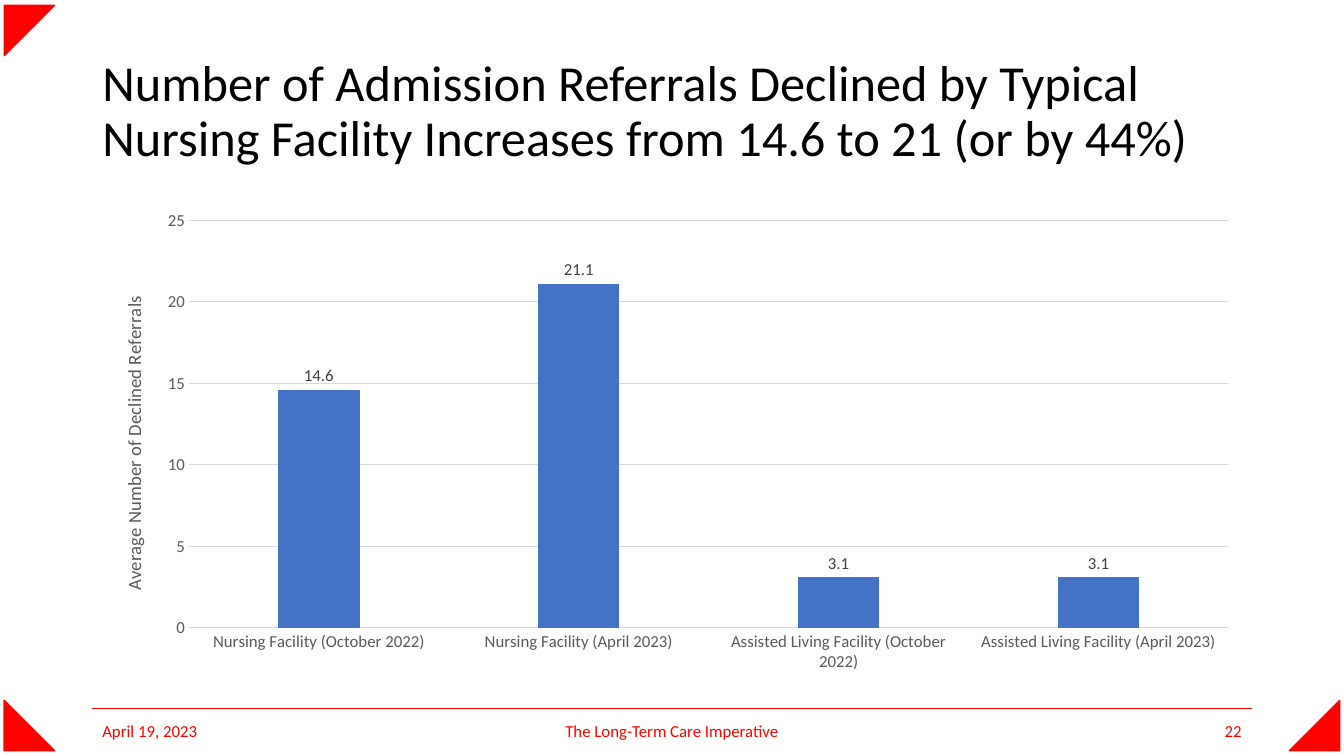
"""Build the slide on declined admission referrals."""
from dataclasses import dataclass

from lxml.etree import SubElement
from pptx import Presentation
from pptx.chart.axis import ValueAxis
from pptx.chart.chart import Chart
from pptx.chart.data import CategoryChartData as Data
from pptx.dml.color import RGBColor as Rgb
from pptx.enum.chart import XL_CHART_TYPE as Kind
from pptx.enum.chart import XL_LABEL_POSITION as Spot
from pptx.enum.chart import XL_TICK_MARK as Tick
from pptx.enum.shapes import MSO_CONNECTOR as Link
from pptx.enum.shapes import MSO_SHAPE as Form
from pptx.enum.text import MSO_ANCHOR as Anchor
from pptx.enum.text import MSO_AUTO_SIZE as Fit
from pptx.enum.text import PP_ALIGN as Align
from pptx.oxml.ns import qn
from pptx.slide import Slide
from pptx.text.text import Font
from pptx.util import Pt

PX = 9525


@dataclass(frozen=True)
class Theme:
    """Colours, type sizes and font of the slide."""
    face: str = "Calibri"
    ink: str = "000000"
    red: str = "FF0000"
    bar: str = "4472C4"
    grid: str = "D9D9D9"
    axis: str = "595959"
    label: str = "404040"
    head: float = 36
    name: float = 13.3
    small: float = 12


@dataclass(frozen=True)
class Box:
    """A rectangle in px."""
    x: int
    y: int
    w: int
    h: int

    def emu(self) -> tuple[int, int, int, int]:
        """Give the sides in EMU."""
        return self.x * PX, self.y * PX, self.w * PX, self.h * PX


@dataclass(frozen=True)
class Corner:
    """A corner triangle and its turn."""
    x: int
    y: int
    turn: int


@dataclass(frozen=True)
class Note:
    """A footer text and its place."""
    text: str
    x: int
    w: int
    align: Align


THEME = Theme()
HEAD = Box(88, 38, 1104, 139)
GRAPH = Box(88, 192, 1104, 457)
PLOT = Box(92, 18, 990, 388)
NAME = Box(24, 87, 18, 282)
TITLE = ("Number of Admission Referrals Declined by Typical "
         "Nursing Facility Increases from 14.6 to 21 (or by 44%)")
CORNERS = (Corner(4, 5, 90), Corner(1228, 667, 270), Corner(4, 667, 0))
NOTES = (
    Note("April 19, 2023", 88, 288, Align.LEFT),
    Note("The Long-Term Care Imperative", 424, 432, Align.CENTER),
    Note("22", 904, 288, Align.RIGHT),
)
RATES = {
    "Nursing Facility (October 2022)": 14.6,
    "Nursing Facility (April 2023)": 21.1,
    "Assisted Living Facility (October 2022)": 3.1,
    "Assisted Living Facility (April 2023)": 3.1,
}


def style(font: Font, size: float, hue: str) -> None:
    """Set face, size and colour of a font."""
    font.name, font.size, font.bold = THEME.face, Pt(size), False
    font.color.rgb = Rgb.from_string(hue)


def add_head(slide: Slide) -> None:
    """Fill and move the title."""
    head = slide.shapes.title
    head.left, head.top, head.width, head.height = HEAD.emu()
    frame = head.text_frame
    frame.auto_size, frame.word_wrap = Fit.NONE, True
    frame.vertical_anchor = Anchor.MIDDLE
    para = frame.paragraphs[0]
    para.alignment, para.line_spacing = Align.LEFT, 0.9
    run = para.add_run()
    run.text = TITLE
    style(run.font, THEME.head, THEME.ink)


def add_corner(slide: Slide, corner: Corner) -> None:
    """Draw one corner triangle."""
    box = Box(corner.x, corner.y, 48, 48)
    shape = slide.shapes.add_shape(Form.RIGHT_TRIANGLE, *box.emu())
    shape.rotation = corner.turn
    shape.shadow.inherit = False
    red = Rgb.from_string(THEME.red)
    shape.fill.solid()
    shape.fill.fore_color.rgb = red
    shape.line.color.rgb = red
    shape.line.width = Pt(1)


def add_rule(slide: Slide) -> None:
    """Draw the line above the footer."""
    rule = slide.shapes.add_connector(
        Link.STRAIGHT, 88 * PX, 675 * PX, 1192 * PX, 675 * PX)
    rule.line.color.rgb = Rgb.from_string(THEME.red)
    rule.line.width = Pt(0.5)
    SubElement(rule.element.spPr, qn("a:effectLst"))


def add_note(slide: Slide, note: Note) -> None:
    """Write one footer text."""
    box = Box(note.x, 677, note.w, 38)
    frame = slide.shapes.add_textbox(*box.emu()).text_frame
    frame.word_wrap, frame.vertical_anchor = True, Anchor.MIDDLE
    para = frame.paragraphs[0]
    para.alignment = note.align
    run = para.add_run()
    run.text = note.text
    style(run.font, THEME.small, THEME.red)


def pin(node, index: int, box: Box, sized: bool) -> None:
    """Fix the place of a chart part within the chart."""
    for old in node.findall(qn("c:layout")):
        node.remove(old)
    layout = SubElement(node, qn("c:layout"))
    node.insert(index, layout)
    manual = SubElement(layout, qn("c:manualLayout"))
    rules = {"xMode": "edge", "yMode": "edge",
             "x": box.x / GRAPH.w, "y": box.y / GRAPH.h}
    if sized:
        rules = {"layoutTarget": "inner", **rules,
                 "w": box.w / GRAPH.w, "h": box.h / GRAPH.h}
    for key, val in rules.items():
        SubElement(manual, qn(f"c:{key}")).set("val", str(val))


def set_scale(axis: ValueAxis) -> None:
    """Format the value axis and its title."""
    axis.minimum_scale, axis.maximum_scale, axis.major_unit = 0, 25, 5
    axis.tick_labels.number_format = "0"
    axis.tick_labels.number_format_is_linked = False
    axis.format.line.fill.background()
    grid = axis.major_gridlines.format.line
    grid.color.rgb, grid.width = Rgb.from_string(THEME.grid), Pt(0.75)
    run = axis.axis_title.text_frame.paragraphs[0].add_run()
    run.text = "Average Number of Declined Referrals"
    style(run.font, THEME.name, THEME.axis)
    pin(axis.axis_title.element, 1, NAME, False)


def set_bars(chart: Chart) -> None:
    """Format the bars and their labels."""
    plot = chart.plots[0]
    plot.gap_width, plot.overlap, plot.vary_by_categories = 219, -27, False
    fill = plot.series[0].format.fill
    fill.solid()
    fill.fore_color.rgb = Rgb.from_string(THEME.bar)
    labels = plot.series[0].data_labels
    labels.show_value, labels.position = True, Spot.OUTSIDE_END
    labels.number_format, labels.number_format_is_linked = "0.0", False
    style(labels.font, THEME.small, THEME.label)


def add_graph(slide: Slide) -> None:
    """Draw the column chart."""
    data = Data()
    data.categories = list(RATES)
    data.add_series("Series 1", list(RATES.values()))
    chart = slide.shapes.add_chart(
        Kind.COLUMN_CLUSTERED, *GRAPH.emu(), data).chart
    chart.has_title = chart.has_legend = False
    style(chart.font, THEME.small, THEME.ink)
    for axis in (chart.category_axis, chart.value_axis):
        axis.major_tick_mark = axis.minor_tick_mark = Tick.NONE
        style(axis.tick_labels.font, THEME.small, THEME.axis)
    base = chart.category_axis.format.line
    base.color.rgb, base.width = Rgb.from_string(THEME.grid), Pt(0.75)
    set_scale(chart.value_axis)
    set_bars(chart)
    pin(chart.element.find(f".//{qn('c:plotArea')}"), 0, PLOT, True)


def main() -> None:
    """Build and save the deck."""
    deck = Presentation()
    deck.slide_width, deck.slide_height = 1280 * PX, 720 * PX
    slide = deck.slides.add_slide(deck.slide_layouts[5])
    for corner in CORNERS:
        add_corner(slide, corner)
    add_rule(slide)
    add_head(slide)
    add_graph(slide)
    for note in NOTES:
        add_note(slide, note)
    deck.save("out.pptx")


if __name__ == "__main__":
    main()
